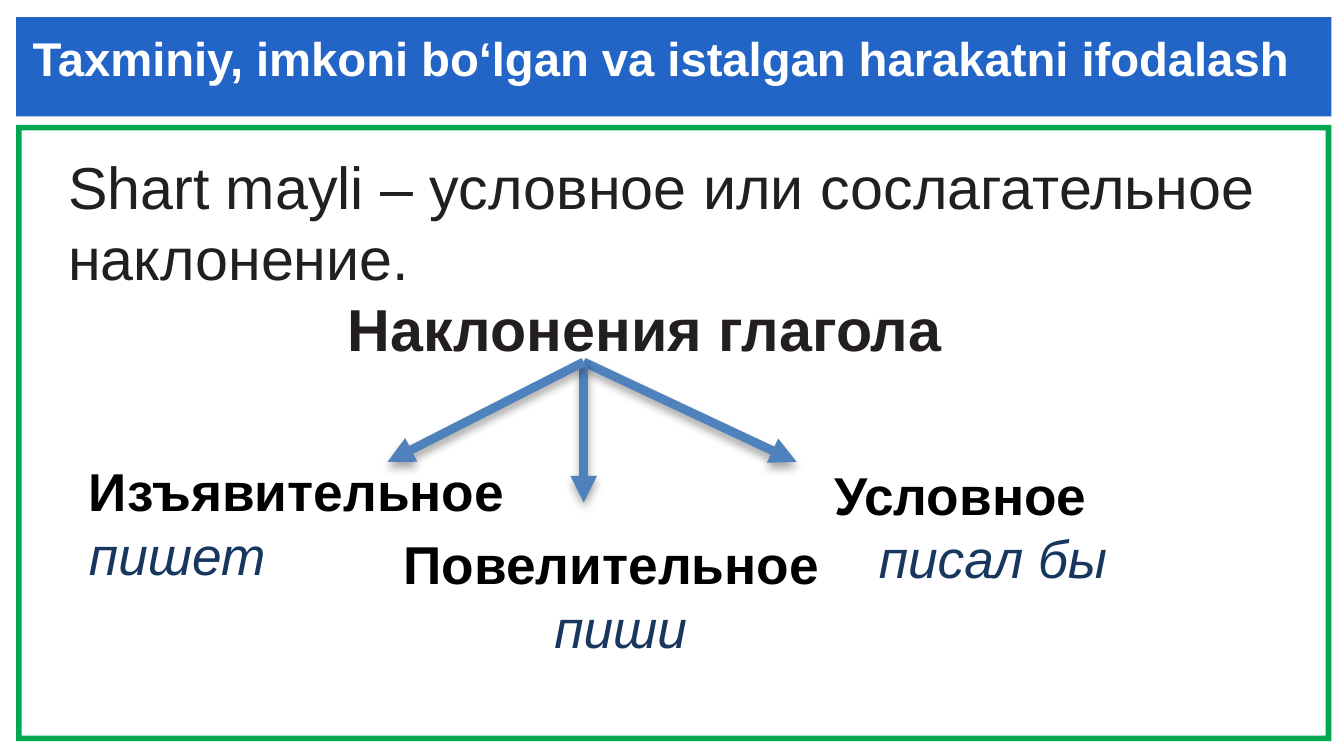
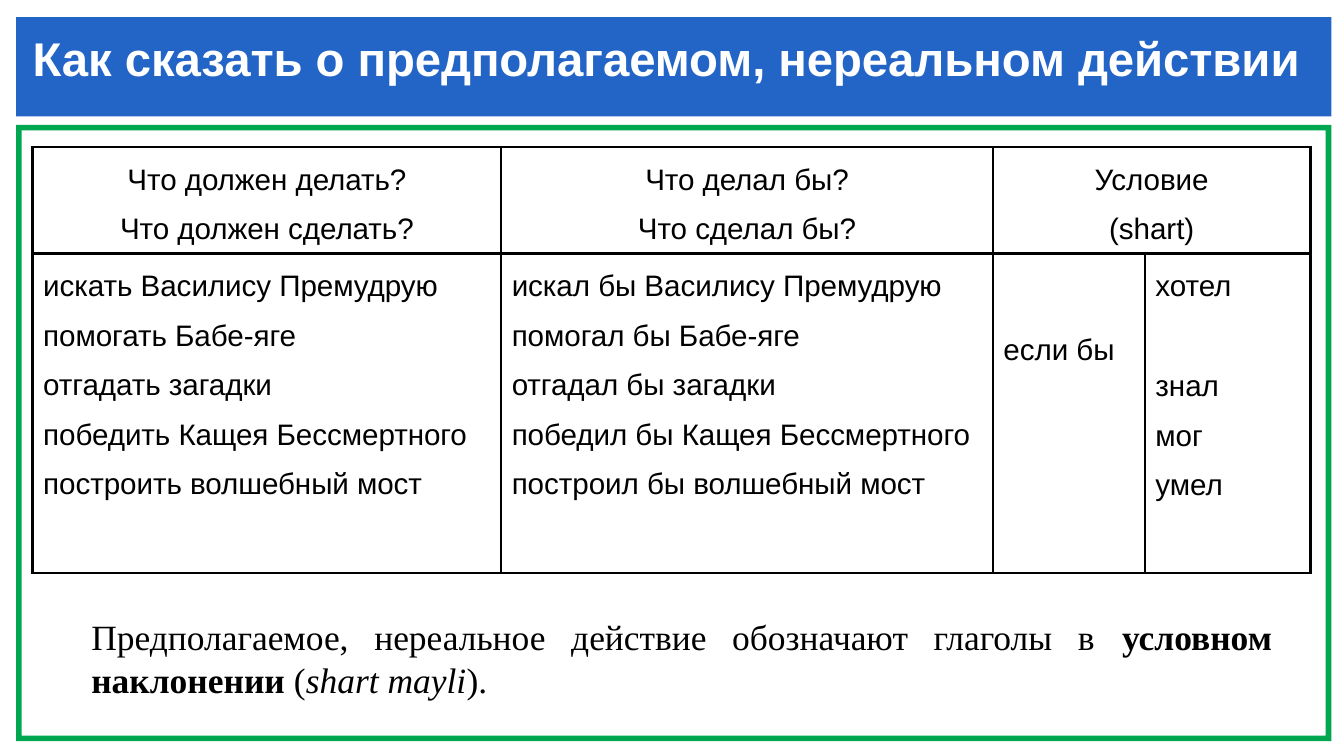
from dataclasses import dataclass

from lxml import etree
from pptx import Presentation
from pptx.dml.color import RGBColor
from pptx.enum.shapes import MSO_CONNECTOR, MSO_SHAPE
from pptx.enum.text import MSO_ANCHOR, MSO_AUTO_SIZE, PP_ALIGN
from pptx.oxml import parse_xml
from pptx.oxml.ns import nsdecls, qn
from pptx.util import Pt

LEFT, CENTER, JUSTIFY = PP_ALIGN.LEFT, PP_ALIGN.CENTER, PP_ALIGN.JUSTIFY
TOP, MIDDLE = MSO_ANCHOR.TOP, MSO_ANCHOR.MIDDLE
RECT, FRAME = MSO_SHAPE.RECTANGLE, MSO_SHAPE.FRAME
STRAIGHT = MSO_CONNECTOR.STRAIGHT


@dataclass(frozen=True)
class Theme:
    sans: str = "Arial"
    serif: str = "Times New Roman"
    white: str = "FFFFFF"
    black: str = "000000"
    ink: str = "231F20"
    navy: str = "17375E"
    band: str = "2365C7"
    frame: str = "00A650"
    arrow: str = "4F81BD"
    title: int = 16
    lead: int = 20
    label: int = 18
    note: int = 12
    cell: int = 10


T = Theme()


@dataclass(frozen=True)
class Box:
    left: float
    top: float
    width: float
    height: float

    def pts(self) -> tuple[Pt, Pt, Pt, Pt]:
        return Pt(self.left), Pt(self.top), Pt(self.width), Pt(self.height)


@dataclass(frozen=True)
class Run:
    text: str
    bold: bool | None = None
    italic: bool | None = None


@dataclass(frozen=True)
class Para:
    runs: tuple[Run, ...]
    size: int
    color: str = T.black
    font: str = T.sans
    bold: bool = False
    italic: bool = False
    align: PP_ALIGN = LEFT
    space: Pt | float = 1.0
    indent: float = 0
    before: float = 0


@dataclass(frozen=True)
class Label:
    box: Box
    name: str
    verb: str
    shift: float = 0
    inset: float = 0


@dataclass(frozen=True)
class Cell:
    row: int
    col: int
    lines: tuple[str, ...]
    align: PP_ALIGN = JUSTIFY
    space: float = 1.5
    top: float = 0
    gap: int | None = None


BAND = Box(5.4, 5.8, 444.6, 33.6)
BORDER = Box(5.4, 42.2, 444.6, 208.4)
RIM = 1.9
TITLE = Box(11, 8, 440, 58)
ROOT = (197.3, 122.4)
TIPS = ((269.3, 156.2), (197.3, 169.9), (131, 156.2))
LABELS = (
    Label(Box(23, 151.5, 156, 51), "Изъявительное", "пишет"),
    Label(Box(125.3, 176, 162, 51), "Повелительное", "пиши", 4, 55),
    Label(Box(275, 152.6, 138, 51), "Условное", "писал бы", 0, 15),
)
GRID = Box(11, 49.7, 432, 144)
COLS = (158.4, 166.2, 51.4, 56)
ROWS = (36, 108)
LINE = 17
CELLS = (
    Cell(0, 0, ("Что должен делать?", "Что должен сделать?"), CENTER),
    Cell(0, 1, ("Что делал бы?", "Что сделал бы?"), CENTER),
    Cell(0, 2, ("Условие", "(shart)"), CENTER),
    Cell(1, 0, ("искать Василису Премудрую", "помогать Бабе-яге",
                "отгадать загадки", "победить Кащея Бессмертного",
                "построить волшебный мост")),
    Cell(1, 1, ("искал бы Василису Премудрую", "помогал бы Бабе-яге",
                "отгадал бы загадки", "победил бы Кащея Бессмертного",
                "построил бы волшебный мост")),
    Cell(1, 2, ("если бы",), LEFT, 1.15, top=25.5),
    Cell(1, 3, ("хотел", "знал", "мог", "умел"), LEFT, gap=1),
)


def rgb(code: str) -> RGBColor:
    return RGBColor.from_string(code)


def write(frame, paras: list[Para]) -> None:
    """Fill a text frame, keeping run formats only where they differ."""
    for i, para in enumerate(paras):
        p = frame.paragraphs[0] if i == 0 else frame.add_paragraph()
        p.alignment = para.align
        p.line_spacing = para.space
        p.space_before = Pt(para.before)
        if para.indent:
            p._p.get_or_add_pPr().set("marL", str(Pt(para.indent)))
        font = p.font
        font.name, font.size = para.font, Pt(para.size)
        font.bold, font.italic = para.bold, para.italic
        font.color.rgb = rgb(para.color)
        for part in para.runs:
            run = p.add_run()
            run.text = part.text
            if part.bold is not None:
                run.font.bold = part.bold
            if part.italic is not None:
                run.font.italic = part.italic


def clear(frame) -> None:
    frame.margin_left = frame.margin_right = 0
    frame.margin_top = frame.margin_bottom = 0


def add_text(slide, box: Box, paras: list[Para], anchor=TOP,
             flush: bool = False) -> None:
    frame = slide.shapes.add_textbox(*box.pts()).text_frame
    frame.word_wrap = True
    frame.vertical_anchor = anchor
    if flush:
        clear(frame)
    write(frame, paras)


def add_block(slide, kind, box: Box, color: str):
    shape = slide.shapes.add_shape(kind, *box.pts())
    shape.shadow.inherit = False
    shape.fill.solid()
    shape.fill.fore_color.rgb = rgb(color)
    shape.line.fill.background()
    return shape


def set_back(slide) -> None:
    """Put the band and border on the layout that all slides share."""
    layout = slide.slide_layout
    for holder in list(layout.placeholders):
        if holder.placeholder_format.idx:
            layout.shapes.element.remove(holder.element)
    band = add_block(slide, RECT, BAND, T.band)
    border = add_block(slide, FRAME, BORDER, T.frame)
    border.adjustments[0] = RIM / BORDER.height
    for shape in (band, border):
        layout.shapes.element.insert(2, shape.element)


def add_slide(deck, text: str):
    slide = deck.slides.add_slide(deck.slide_layouts[5])
    title = slide.shapes.title
    title.left, title.top, title.width, title.height = TITLE.pts()
    frame = title.text_frame
    frame.word_wrap = True
    frame.auto_size = MSO_AUTO_SIZE.NONE
    frame.vertical_anchor = TOP
    clear(frame)
    frame.margin_top = Pt(2)
    write(frame, [Para((Run(text),), T.title, T.white, bold=True)])
    return slide


def add_arrow(slide, tip: tuple[float, float]) -> None:
    ends = [Pt(n) for n in (*ROOT, *tip)]
    arrow = slide.shapes.add_connector(STRAIGHT, *ends)
    arrow.line.color.rgb = rgb(T.arrow)
    arrow.line.width = Pt(3)
    line = arrow.line._get_or_add_ln()
    etree.SubElement(line, qn("a:tailEnd"), type="triangle")
    arrow.element.spPr.append(parse_xml(
        f'<a:effectLst {nsdecls("a")}><a:outerShdw blurRad="{Pt(3.1)}" '
        f'dist="{Pt(1.8)}" dir="5400000" rotWithShape="0">'
        f'<a:srgbClr val="{T.black}"><a:alpha val="35000"/></a:srgbClr>'
        "</a:outerShdw></a:effectLst>"))


def add_label(slide, label: Label) -> None:
    space = Pt(21.6)
    add_text(slide, label.box, [
        Para((Run(label.name),), T.label, bold=True, space=space,
             indent=label.shift),
        Para((Run(label.verb),), T.label, T.navy, italic=True, space=space,
             indent=label.inset),
    ])


def add_edges(cell) -> None:
    props = cell._tc.get_or_add_tcPr()
    for side in ("lnL", "lnR", "lnT", "lnB"):
        edge = etree.SubElement(props, qn(f"a:{side}"), w=str(Pt(1)))
        fill = etree.SubElement(edge, qn("a:solidFill"))
        etree.SubElement(fill, qn("a:srgbClr"), val=T.black)


def add_grid(slide) -> None:
    shape = slide.shapes.add_table(len(ROWS), len(COLS), *GRID.pts())
    table = shape.table
    table.first_row = table.horz_banding = False
    for col, width in zip(table.columns, COLS):
        col.width = Pt(width)
    for row, height in zip(table.rows, ROWS):
        row.height = Pt(height)
    table.cell(0, 2).merge(table.cell(0, 3))
    for cell in table.iter_cells():
        add_edges(cell)
        cell.fill.background()
    for item in CELLS:
        cell = table.cell(item.row, item.col)
        clear(cell)
        cell.margin_left = cell.margin_right = Pt(3.6)
        cell.margin_top = Pt(item.top)
        write(cell.text_frame, [
            Para((Run(text),), T.cell, align=item.align, space=item.space,
                 before=LINE if i == item.gap else 0)
            for i, text in enumerate(item.lines)])


def add_moods(deck) -> None:
    slide = add_slide(
        deck, "Taxminiy, imkoni bo‘lgan va istalgan harakatni ifodalash")
    set_back(slide)
    text = "Shart mayli – условное или сослагательное наклонение."
    space = Pt(24)
    add_text(slide, Box(23, 50.8, 414, 72.7), [
        Para((Run(text),), T.lead, T.ink, space=space),
        Para((Run("Наклонения глагола"),), T.lead, T.ink, bold=True,
             space=space, indent=94.5),
    ], flush=True)
    for tip in TIPS:
        add_arrow(slide, tip)
    for label in LABELS:
        add_label(slide, label)


def add_unreal(deck) -> None:
    slide = add_slide(deck, "Как сказать о предполагаемом, нереальном действии")
    add_grid(slide)
    runs = (
        Run("Предполагаемое, нереальное действие обозначают глаголы в "),
        Run("условном наклонении", bold=True),
        Run(" ("),
        Run("shart mayli", italic=True),
        Run(")."),
    )
    add_text(slide, Box(23.8, 204.4, 413.3, 36), [
        Para(runs, T.note, font=T.serif, align=JUSTIFY, space=Pt(14.5)),
    ], MIDDLE)


def main() -> None:
    deck = Presentation()
    deck.slide_width, deck.slide_height = Pt(454.3), Pt(255.6)
    add_moods(deck)
    add_unreal(deck)
    deck.save("out.pptx")


if __name__ == "__main__":
    main()
